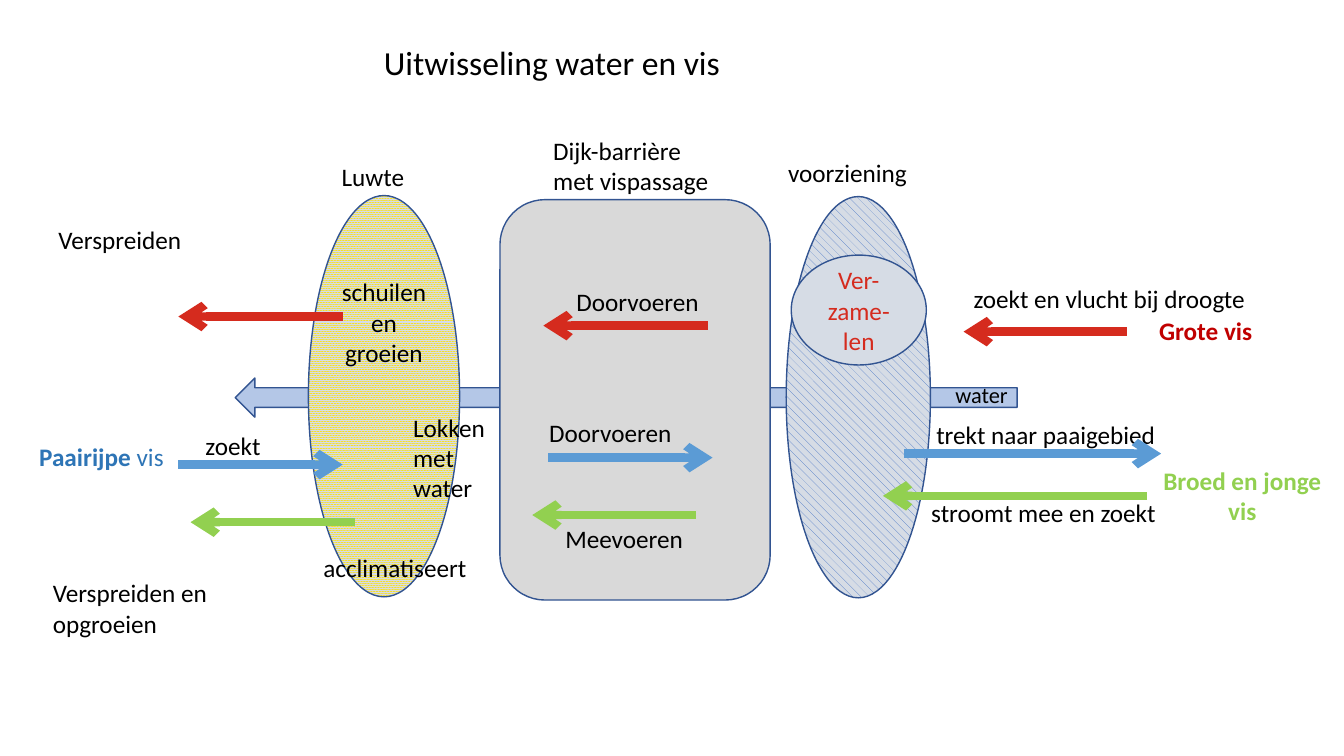
"""Builds the slide on the exchange of water and fish through a dike."""
import pptx
import pptx.dml.color
import pptx.enum.dml
import pptx.enum.shapes
import pptx.enum.text
import pptx.oxml.ns
import pptx.oxml.xmlchemy
import pptx.util

Pt = pptx.util.Pt
SHAPE = pptx.enum.shapes.MSO_SHAPE
PATTERN = pptx.enum.dml.MSO_PATTERN
ALIGN = pptx.enum.text.PP_ALIGN
ANCHOR = pptx.enum.text.MSO_ANCHOR
FIT = pptx.enum.text.MSO_AUTO_SIZE

COLOURS = {
    "text": "000000",
    "outline": "325491",
    "water": "B4C7E7",
    "dike": "D9D9D9",
    "shelter": "D6DCE5",
    "sand": "F9E11E",
    "hatch": "4472C4",
    "red": "D52B1E",
    "dark red": "C00000",
    "green": "92D050",
    "blue": "5B9BD5",
    "dark blue": "2E75B6",
}

LABELS = [
    (139.7, 303.8, 54, 29, ["zoekt"]),
    (688.3, 198.7, 211, 29, ["zoekt en vlucht bij droogte"]),
    (658.1, 351.4, 181, 29, ["stroomt mee en zoekt"]),
    (388.1, 92.9, 127, 51, ["Dijk-barrière", "met vispassage"]),
    (288, 290.9, 70.5, 73, ["Lokken", "met", "water"]),
    (396.7, 370.1, 114, 29, ["Meevoeren"]),
    (661.7, 295.9, 173, 29, ["trekt naar paaigebied"]),
    (404.6, 200.9, 121, 29, ["Doorvoeren"]),
    (385.2, 294.5, 121, 29, ["Doorvoeren"]),
    (30.6, 409, 151, 51, ["Verspreiden en", "opgroeien"]),
    (34.6, 157, 129, 29, ["Verspreiden"]),
    (236.9, 111.6, 69, 29, ["Luwte"]),
    (555.8, 108.7, 101, 29, ["voorziening"]),
    (223.9, 391, 122.4, 29, ["acclimatiseert"]),
]

ARROWS = [
    ("red", 805, 688.3, 236.9),
    ("red", 505.4, 388.1, 232.6),
    ("red", 244.8, 127.4, 226.1),
    ("green", 819.4, 630.7, 354.2),
    ("green", 496.8, 380.2, 367.9),
    ("green", 253.4, 136.1, 373),
    ("blue", 391.7, 509, 326.9),
    ("blue", 127.4, 244.8, 331.9),
    ("blue", 645.8, 829.4, 324),
]


def rgb(name):
    """Return the named colour."""
    return pptx.dml.color.RGBColor.from_string(COLOURS[name])


def add_run(paragraph, text, size=18, colour="text", bold=False):
    """Append one formatted run to a paragraph."""
    run = paragraph.add_run()
    run.text = text
    run.font.name = "Calibri"
    run.font.size = Pt(size)
    run.font.bold = bold
    run.font.color.rgb = rgb(colour)


def add_zone(slide, kind, left, top, width, height, fill, back=None, pattern=None):
    """Add an outlined shape with a solid or patterned fill."""
    zone = slide.shapes.add_shape(kind, Pt(left), Pt(top), Pt(width), Pt(height))
    zone.shadow.inherit = False
    zone.line.color.rgb = rgb("outline")
    zone.line.width = Pt(1)
    if pattern is None:
        zone.fill.solid()
    else:
        zone.fill.patterned()
        zone.fill.pattern = pattern
        zone.fill.back_color.rgb = rgb(back)
    zone.fill.fore_color.rgb = rgb(fill)
    return zone


def write_in_zone(zone, text, colour, anchor, margin_top=3.6):
    """Write centred text inside a shape."""
    frame = zone.text_frame
    frame.word_wrap = True
    frame.vertical_anchor = anchor
    frame.margin_top = Pt(margin_top)
    frame.paragraphs[0].alignment = ALIGN.CENTER
    add_run(frame.paragraphs[0], text, colour=colour)


def add_label(slide, left, top, width, height, lines, **style):
    """Add an unwrapped text box with one paragraph for each line."""
    label = slide.shapes.add_textbox(Pt(left), Pt(top), Pt(width), Pt(height))
    frame = label.text_frame
    frame.word_wrap = False
    frame.auto_size = FIT.SHAPE_TO_FIT_TEXT
    for number, line in enumerate(lines):
        paragraph = frame.add_paragraph() if number else frame.paragraphs[0]
        add_run(paragraph, line, **style)
    return frame


def add_arrow(slide, colour, start, end, y):
    """Add a thick horizontal arrow that points at its end."""
    arrow = slide.shapes.add_connector(
        pptx.enum.shapes.MSO_CONNECTOR.STRAIGHT, Pt(start), Pt(y), Pt(end), Pt(y))
    arrow.line.color.rgb = rgb(colour)
    arrow.line.width = Pt(6)
    tip = pptx.oxml.xmlchemy.OxmlElement("a:tailEnd")
    tip.set("type", "arrow")
    properties = arrow._element.spPr
    properties.find(pptx.oxml.ns.qn("a:ln")).append(tip)
    properties.append(pptx.oxml.xmlchemy.OxmlElement("a:effectLst"))


def set_title(slide, text):
    """Move and format the title placeholder."""
    title = slide.shapes.title
    title.left, title.top, title.width, title.height = Pt(267), Pt(26.6), Pt(316), Pt(36)
    frame = title.text_frame
    frame.word_wrap = False
    frame.auto_size = FIT.SHAPE_TO_FIT_TEXT
    frame.vertical_anchor = ANCHOR.TOP
    frame.paragraphs[0].alignment = ALIGN.LEFT
    add_run(frame.paragraphs[0], text, size=24)


def main():
    """Build and save the slide."""
    deck = pptx.Presentation()
    deck.slide_width, deck.slide_height = Pt(960), Pt(540)
    slide = deck.slides.add_slide(deck.slide_layouts[5])
    set_title(slide, "Uitwisseling water en vis")

    add_zone(slide, SHAPE.LEFT_ARROW, 168, 270, 558.5, 28, "water")
    add_zone(slide, SHAPE.ROUNDED_RECTANGLE, 357.1, 142.6, 193, 286, "dike")
    shelter = add_zone(slide, SHAPE.OVAL, 220.3, 139.7, 108, 286.6,
                       "shelter", "sand", PATTERN.PERCENT_90)
    write_in_zone(shelter, "schuilen en groeien", "text", ANCHOR.TOP, 16)
    add_zone(slide, SHAPE.OVAL, 561.6, 140.4, 103, 286.6,
             "hatch", "shelter", PATTERN.DASHED_DOWNWARD_DIAGONAL)
    gathering = add_zone(slide, SHAPE.OVAL, 565.2, 182.2, 96.5, 78.5, "shelter")
    write_in_zone(gathering, "Ver-zame-len", "red", ANCHOR.MIDDLE)

    for label in LABELS:
        add_label(slide, *label)
    add_label(slide, 675.4, 268.6, 52.6, 26.6, ["water"], size=16)
    add_label(slide, 820.8, 221.8, 106.6, 29, ["Grote vis"], colour="dark red", bold=True)
    spawners = add_label(slide, 20.9, 311.8, 137.5, 29, ["Paairijpe"],
                         colour="dark blue", bold=True)
    add_run(spawners.paragraphs[0], " vis", colour="dark blue")
    young = add_label(slide, 819.4, 329, 136, 51, ["Broed en jonge vis"],
                      colour="green", bold=True)
    young.word_wrap = True
    young.paragraphs[0].alignment = ALIGN.CENTER

    for arrow in ARROWS:
        add_arrow(slide, *arrow)
    deck.save("out.pptx")


if __name__ == "__main__":
    main()
